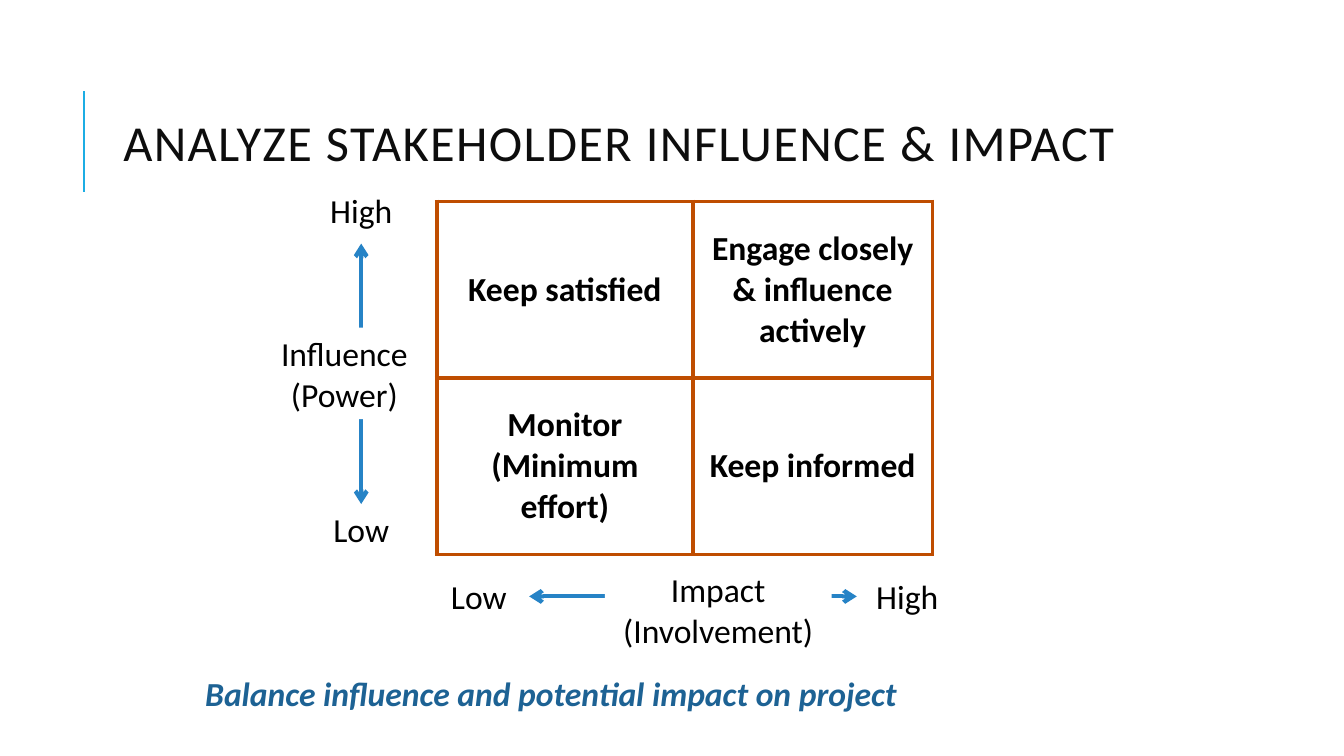
from dataclasses import dataclass
from lxml.etree import SubElement
from pptx import Presentation
from pptx.dml.color import RGBColor
from pptx.enum.shapes import MSO_CONNECTOR, MSO_SHAPE
from pptx.enum.text import MSO_ANCHOR, PP_ALIGN
from pptx.oxml import parse_xml
from pptx.oxml.ns import nsdecls, qn
from pptx.util import Inches, Pt


@dataclass(frozen=True)
class Theme:
    font: str = "Calibri"
    title_size: int = 36
    body_size: int = 24
    title: str = "0D0D0D"
    text: str = "000000"
    note: str = "1D6294"
    rule: str = "1CADE4"
    arrow: str = "2683C6"
    border: str = "BF4D00"
    paper: str = "FFFFFF"
    rule_width: float = 1.5
    line_width: float = 3


THEME = Theme()
COLS, ROWS = 160, 90
WIDTH, HEIGHT = Inches(13.33), Inches(7.5)


def col(n):
    return round(WIDTH * n / COLS)


def row(n):
    return round(HEIGHT * n / ROWS)


def box(x, y, w, h):
    return col(x), row(y), col(w), row(h)


def add_run(p, text, size=THEME.body_size, color=THEME.text, bold=False, italic=False):
    r = p.add_run()
    r.text = text
    r.font.name = THEME.font
    r.font.size = Pt(size)
    r.font.bold = bold
    r.font.italic = italic
    r.font.color.rgb = RGBColor.from_string(color)
    return r


def write_lines(tf, lines, align=PP_ALIGN.CENTER, **style):
    tf.word_wrap = True
    for i, line in enumerate(lines):
        p = tf.paragraphs[0] if i == 0 else tf.add_paragraph()
        p.alignment = align
        add_run(p, line, **style)


def add_text(s, area, text, **style):
    tf = s.shapes.add_textbox(*box(*area)).text_frame
    write_lines(tf, [text], **style)
    return tf


def add_title(s, area, text):
    tf = add_text(s, area, text, align=PP_ALIGN.LEFT,
                  size=THEME.title_size, color=THEME.title)
    tf.vertical_anchor = MSO_ANCHOR.MIDDLE
    p = tf.paragraphs[0]
    p.line_spacing = 0.8
    rPr = p.runs[0].font._element
    rPr.set("spc", "100")
    rPr.find(qn("a:solidFill")).addnext(parse_xml(
        f'<a:effectLst {nsdecls("a")}>'
        '<a:outerShdw blurRad="38100" dist="38100" dir="2700000" algn="tl">'
        '<a:srgbClr val="000000"><a:alpha val="43000"/></a:srgbClr>'
        '</a:outerShdw></a:effectLst>'))


def add_line(s, start, end, color, width, arrows=False):
    cx = s.shapes.add_connector(MSO_CONNECTOR.STRAIGHT, col(start[0]), row(start[1]),
                                col(end[0]), row(end[1]))
    cx.line.color.rgb = RGBColor.from_string(color)
    cx.line.width = Pt(width)
    if arrows:
        ln = cx.line._get_or_add_ln()
        for tag in ("a:headEnd", "a:tailEnd"):
            SubElement(ln, qn(tag), type="arrow")
    SubElement(cx._element.spPr, qn("a:effectLst"))


def add_axis_name(s, area, lines):
    sp = s.shapes.add_shape(MSO_SHAPE.RECTANGLE, *box(*area))
    sp.shadow.inherit = False
    sp.fill.solid()
    sp.fill.fore_color.rgb = RGBColor.from_string(THEME.paper)
    sp.line.fill.background()
    write_lines(sp.text_frame, lines)


def add_borders(cell):
    tcPr = cell._tc.get_or_add_tcPr()
    for i, side in enumerate(("lnL", "lnR", "lnT", "lnB")):
        tcPr.insert(i, parse_xml(
            f'<a:{side} {nsdecls("a")} w="{Pt(THEME.line_width)}"><a:solidFill>'
            f'<a:srgbClr val="{THEME.border}"/></a:solidFill></a:{side}>'))


def add_matrix(s, x, y, widths, height, quadrants):
    table = s.shapes.add_table(len(quadrants), len(widths), *box(
        x, y, sum(widths), height * len(quadrants))).table
    table.first_row = table.horz_banding = False
    for i, width in enumerate(widths):
        table.columns[i].width = col(width)
    for i, texts in enumerate(quadrants):
        table.rows[i].height = row(height)
        for j, text in enumerate(texts):
            cell = table.cell(i, j)
            cell.fill.background()
            cell.vertical_anchor = MSO_ANCHOR.MIDDLE
            write_lines(cell.text_frame, [text], bold=True)
            add_borders(cell)


def main():
    prs = Presentation()
    prs.slide_width, prs.slide_height = WIDTH, HEIGHT
    s = prs.slides.add_slide(prs.slide_layouts[6])

    add_line(s, (10, 22.8), (10, 10.8), THEME.rule, THEME.rule_width)
    add_title(s, (13.5, 7.7, 127.5, 19.7), "ANALYZE STAKEHOLDER INFLUENCE & IMPACT")
    add_matrix(s, 52, 24, (30.5, 28.5), 21, [
        ("Keep satisfied", "Engage closely & influence actively"),
        ("Monitor (Minimum effort)", "Keep informed"),
    ])
    add_text(s, (23.25, 79.5, 108, 6), "Balance influence and potential impact on project",
             align=PP_ALIGN.LEFT, color=THEME.note, bold=True, italic=True)

    for start, end in (((43, 29), (43, 60)), ((102, 71), (63, 71))):
        add_line(s, start, end, THEME.arrow, THEME.line_width, arrows=True)
    for x, y, level in ((37, 22, "High"), (37, 60, "Low"), (51, 68, "Low"), (102, 68, "High")):
        add_text(s, (x, y, 12, 6), level)
    add_axis_name(s, (31, 39, 20, 10.9), ("Influence", "(Power)"))
    add_axis_name(s, (72, 67.1, 27, 10.9), ("Impact", "(Involvement)"))

    prs.save("out.pptx")


if __name__ == "__main__":
    main()
